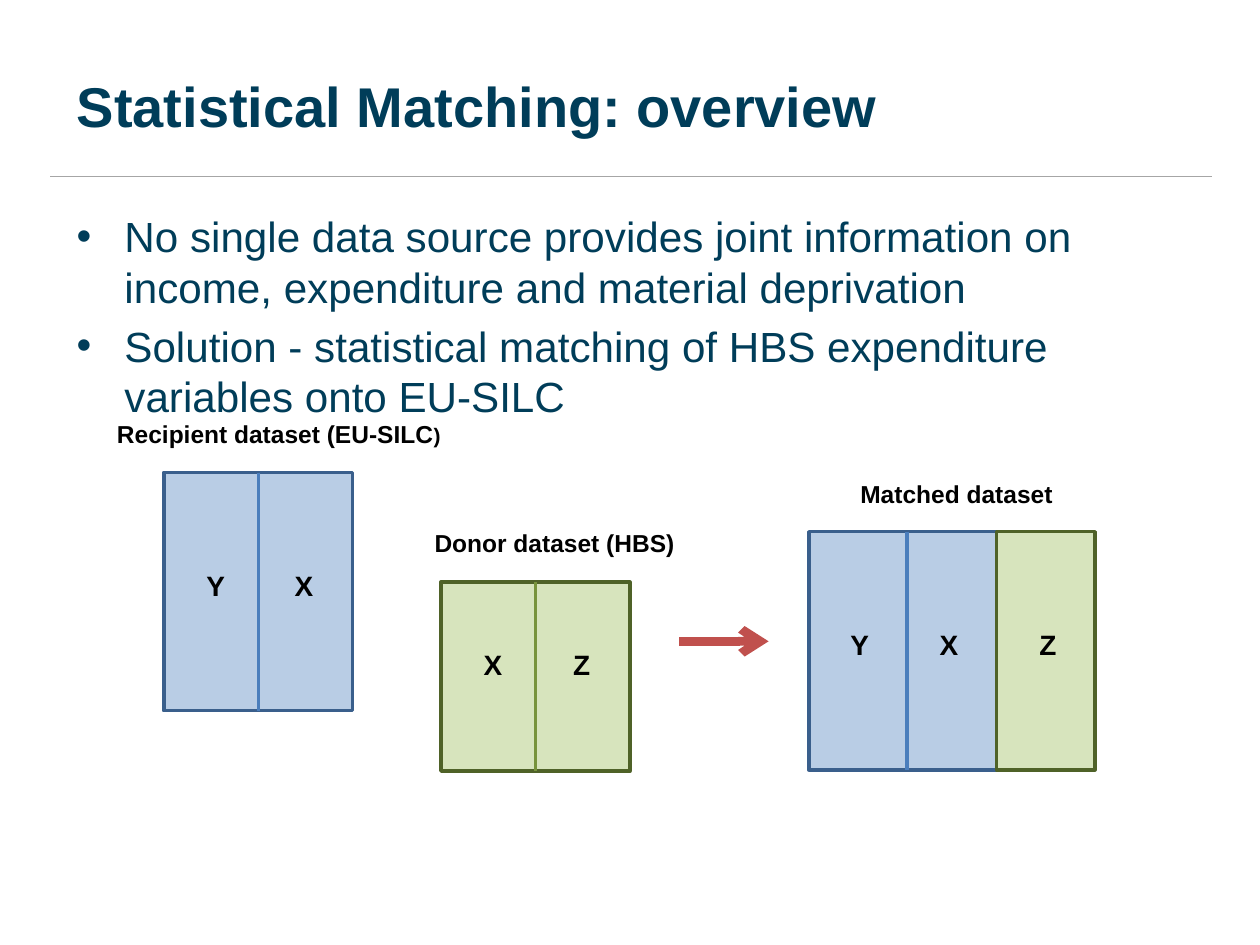
"""Build the statistical matching overview slide."""
from lxml import etree
from pptx import Presentation
from pptx.dml.color import RGBColor
from pptx.enum.shapes import MSO_CONNECTOR, MSO_SHAPE
from pptx.enum.text import MSO_ANCHOR, PP_ALIGN
from pptx.oxml.ns import qn
from pptx.util import Inches, Pt

STRAIGHT = MSO_CONNECTOR.STRAIGHT
RECTANGLE = MSO_SHAPE.RECTANGLE
MIDDLE = MSO_ANCHOR.MIDDLE
LEFT = PP_ALIGN.LEFT
NAVY, GREY, RED = "003D59", "A6A6A6", "C0504D"
BLUE, BLUE_EDGE, BLUE_DIVIDER = "B9CDE5", "3A5F8C", "4B7EBC"
GREEN, GREEN_EDGE, GREEN_DIVIDER = "D7E4BD", "4F6228", "77933C"


def style_font(font, size, color, bold=False):
    """Set an Arial font."""
    font.name, font.size, font.bold = "Arial", Pt(size), bold
    font.color.rgb = RGBColor.from_string(color)


def add_line(x1, y1, x2, y2, color, width):
    """Draw a straight line without a shadow."""
    line = page.shapes.add_connector(STRAIGHT, Inches(x1), Inches(y1), Inches(x2), Inches(y2))
    line.line.color.rgb = RGBColor.from_string(color)
    line.line.width = Pt(width)
    etree.SubElement(line._element.spPr, qn("a:effectLst"))
    return line


deck = Presentation()
deck.slide_width, deck.slide_height = Inches(10), Inches(7.5)
page = deck.slides.add_slide(deck.slide_layouts[5])

title = page.shapes.title
title.left, title.top = Inches(0.51), Inches(0.21)
title.width, title.height = Inches(9), Inches(1.25)
title.text_frame.text = "Statistical Matching: overview"
title.text_frame.vertical_anchor = MIDDLE
title.text_frame.paragraphs[0].alignment = LEFT
style_font(title.text_frame.paragraphs[0].font, 32, NAVY, True)
add_line(0.4, 1.4, 9.62, 1.4, GREY, 0.75)

body = page.shapes.add_textbox(Inches(0.51), Inches(1.62), Inches(9), Inches(1.73))
body.text_frame.word_wrap = True
body.text_frame.text = (
    "No single data source provides joint information on income, expenditure and material deprivation\n"
    "Solution - statistical matching of HBS expenditure variables onto EU-SILC"
)
for para in body.text_frame.paragraphs:
    style_font(para.font, 24.1, NAVY)
    para.space_before = Pt(4.8)
    properties = para._p.get_or_add_pPr()
    properties.set("marL", str(Inches(0.38)))
    properties.set("indent", str(-Inches(0.38)))
    bullet_font = etree.SubElement(properties, qn("a:buFont"))
    bullet_font.set("typeface", "Arial")
    etree.SubElement(properties, qn("a:buChar")).set("char", "•")

blocks = []
for left, top, width, height, fill, edge in [
    (1.3, 3.75, 1.5, 1.89, BLUE, BLUE_EDGE),
    (3.5, 4.62, 1.5, 1.5, GREEN, GREEN_EDGE),
    (6.42, 4.22, 1.5, 1.89, BLUE, BLUE_EDGE),
    (7.91, 4.22, 0.78, 1.89, GREEN, GREEN_EDGE),
]:
    block = page.shapes.add_shape(RECTANGLE, Inches(left), Inches(top), Inches(width), Inches(height))
    block.shadow.inherit = False
    block.fill.solid()
    block.fill.fore_color.rgb = RGBColor.from_string(fill)
    block.line.color.rgb = RGBColor.from_string(edge)
    block.line.width = Pt(2)
    blocks.append(block)

recipient, donor = blocks[:2]
for dataset, x, top, bottom, color in [
    (recipient, 2.05, 3.75, 5.64, BLUE_DIVIDER),
    (donor, 4.25, 4.62, 6.12, GREEN_DIVIDER),
]:
    divider = add_line(x, top, x, bottom, color, 2)
    divider.begin_connect(dataset, 0)
    divider.end_connect(dataset, 2)
add_line(7.2, 4.22, 7.2, 6.11, BLUE_DIVIDER, 2)

for left, top, width, height, size, parts in [
    (0.83, 3.28, 2.78, 0.34, 14, ["Recipient dataset (EU-SILC", ")"]),
    (3.35, 4.14, 2.12, 0.34, 14, ["Donor dataset (HBS)"]),
    (6.73, 3.75, 1.73, 0.34, 14, ["Matched dataset"]),
    (1.54, 4.46, 0.29, 0.37, 16, ["Y"]),
    (2.24, 4.46, 0.33, 0.37, 16, ["X"]),
    (3.74, 5.09, 0.29, 0.37, 16, ["X"]),
    (4.45, 5.09, 0.29, 0.37, 16, ["Z"]),
    (6.65, 4.93, 0.29, 0.37, 16, ["Y"]),
    (7.36, 4.93, 0.29, 0.37, 16, ["X"]),
    (8.15, 4.93, 0.29, 0.37, 16, ["Z"]),
]:
    box = page.shapes.add_textbox(Inches(left), Inches(top), Inches(width), Inches(height))
    box.text_frame.word_wrap = size == 16
    para = box.text_frame.paragraphs[0]
    style_font(para.font, size, "000000", True)
    for part in parts:
        span = para.add_run()
        span.text = part
        if part == ")":
            span.font.size = Pt(12)

arrow = add_line(5.39, 5.09, 6.1, 5.09, RED, 5)
etree.SubElement(arrow.line._get_or_add_ln(), qn("a:tailEnd")).set("type", "arrow")

deck.save("out.pptx")
